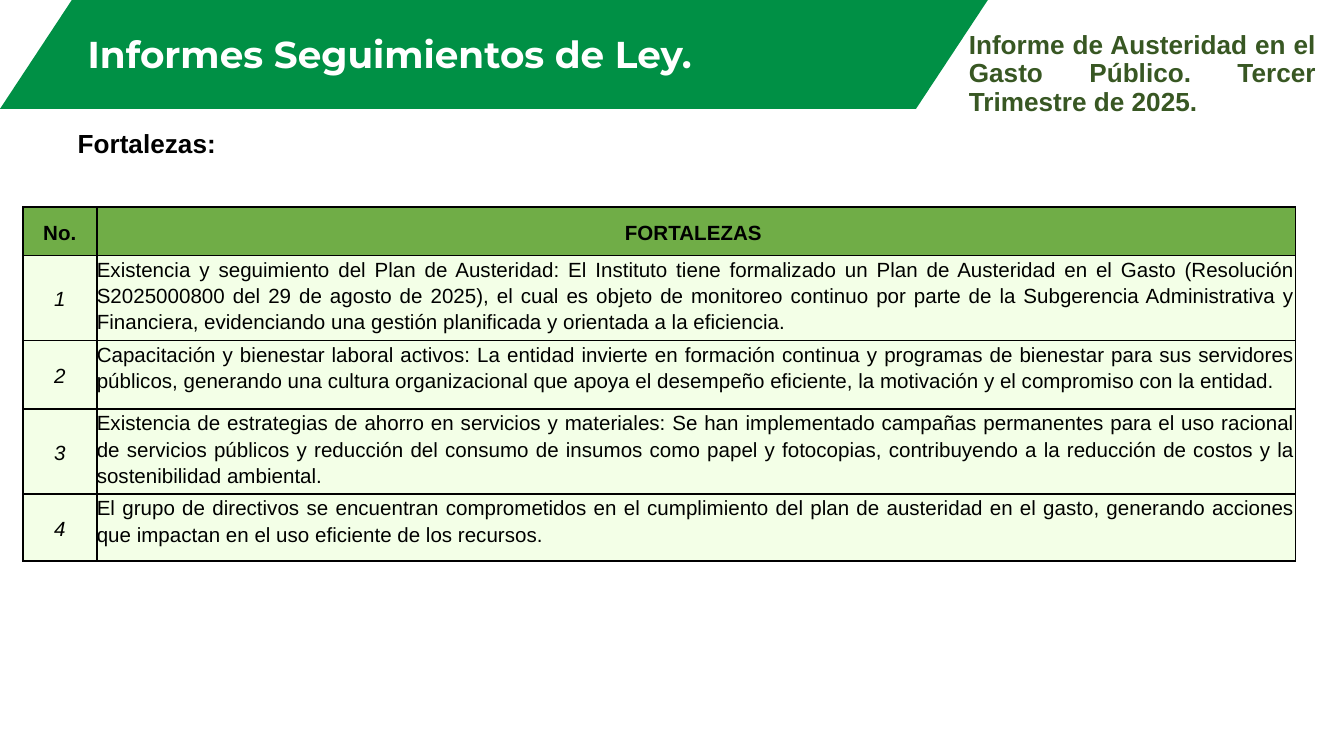
import pptx
import pptx.dml.color
import pptx.enum.shapes
import pptx.enum.text
import pptx.oxml
import pptx.oxml.ns
import pptx.util

Inches = pptx.util.Inches
Align = pptx.enum.text.PP_ALIGN
Anchor = pptx.enum.text.MSO_ANCHOR

STRENGTHS = [
    "Existencia y seguimiento del Plan de Austeridad: El Instituto tiene formalizado un Plan de "
    "Austeridad en el Gasto (Resolución S2025000800 del 29 de agosto de 2025), el cual es objeto "
    "de monitoreo continuo por parte de la Subgerencia Administrativa y Financiera, evidenciando "
    "una gestión planificada y orientada a la eficiencia.",
    "Capacitación y bienestar laboral activos: La entidad invierte en formación continua y "
    "programas de bienestar para sus servidores públicos, generando una cultura organizacional "
    "que apoya el desempeño eficiente, la motivación y el compromiso con la entidad.",
    "Existencia de estrategias de ahorro en servicios y materiales: Se han implementado campañas "
    "permanentes para el uso racional de servicios públicos y reducción del consumo de insumos "
    "como papel y fotocopias, contribuyendo a la reducción de costos y la sostenibilidad ambiental.",
    "El grupo de directivos se encuentran comprometidos en el cumplimiento del plan de austeridad "
    "en el gasto, generando acciones que impactan en el uso eficiente de los recursos.",
]
COLUMN_WIDTHS = [0.55, 8.92]
ROW_HEIGHTS = [0.36, 0.63, 0.51, 0.63, 0.5]


def rgb(value):
    return pptx.dml.color.RGBColor.from_string(value)


def write_text(frame, text, size, color="000000", font="Arial", bold=False, italic=False,
               align=Align.JUSTIFY, spacing=1.0):
    frame.text = text
    para = frame.paragraphs[0]
    para.alignment = align
    para.line_spacing = spacing
    for span in para.runs:
        span.font.name = font
        span.font.size = pptx.util.Pt(size)
        span.font.bold = bold
        span.font.italic = italic
        span.font.color.rgb = rgb(color)


def add_banner(page):
    """Draw the slanted green band behind every other element."""
    banner = page.shapes.add_shape(pptx.enum.shapes.MSO_SHAPE.PARALLELOGRAM,
                                   0, 0, Inches(7.35), Inches(0.81))
    banner.adjustments[0] = 0.66
    banner.shadow.inherit = False
    banner.fill.solid()
    banner.fill.fore_color.rgb = rgb("009045")
    banner.line.fill.background()
    page.shapes._spTree.insert(2, banner._element)


def set_title(page, text):
    title = page.shapes.title
    title.left, title.top = Inches(0), Inches(0.19)
    title.width, title.height = Inches(5.88), Inches(0.43)
    frame = title.text_frame
    frame.word_wrap = True
    frame.auto_size = pptx.enum.text.MSO_AUTO_SIZE.NONE
    frame.vertical_anchor = Anchor.BOTTOM
    write_text(frame, text, 20, "FFFFFF", "Montserrat", bold=True,
               align=Align.CENTER, spacing=0.9)


def add_label(page, text, left, top, width, height, color, wrap=True, spacing=1.0):
    box = page.shapes.add_textbox(Inches(left), Inches(top), Inches(width), Inches(height))
    box.text_frame.word_wrap = wrap
    write_text(box.text_frame, text, 14, color, bold=True, spacing=spacing)


def add_borders(cell):
    properties = cell._tc.get_or_add_tcPr()
    for side in ("lnL", "lnR", "lnT", "lnB"):
        properties.append(pptx.oxml.parse_xml(
            f'<a:{side} {pptx.oxml.ns.nsdecls("a")} w="12700"><a:solidFill>'
            f'<a:srgbClr val="000000"/></a:solidFill></a:{side}>'))


def fill_cell(cell, text, color, anchor=Anchor.MIDDLE, **style):
    add_borders(cell)
    cell.fill.solid()
    cell.fill.fore_color.rgb = rgb(color)
    cell.margin_left = cell.margin_right = cell.margin_top = cell.margin_bottom = 0
    cell.vertical_anchor = anchor
    write_text(cell.text_frame, text, 11, spacing=1.15, **style)


def add_strengths_table(page):
    table = page.shapes.add_table(
        len(ROW_HEIGHTS), len(COLUMN_WIDTHS), Inches(0.17), Inches(1.54),
        Inches(sum(COLUMN_WIDTHS)), Inches(sum(ROW_HEIGHTS))).table
    for column, width in zip(table.columns, COLUMN_WIDTHS):
        column.width = Inches(width)
    for row, height in zip(table.rows, ROW_HEIGHTS):
        row.height = Inches(height)
    for column, heading in enumerate(["No.", "FORTALEZAS "]):
        fill_cell(table.cell(0, column), heading, "70AD47", bold=True, align=Align.CENTER)
    for number, strength in enumerate(STRENGTHS, start=1):
        fill_cell(table.cell(number, 0), str(number), "F3FFE7", italic=True, align=Align.CENTER)
        fill_cell(table.cell(number, 1), strength, "F3FFE7", anchor=Anchor.TOP)


def main():
    deck = pptx.Presentation()
    deck.slide_width = Inches(10)
    deck.slide_height = deck.slide_width * 9 // 16
    page = deck.slides.add_slide(deck.slide_layouts[5])
    add_banner(page)
    set_title(page, "Informes Seguimientos de Ley. ")
    add_label(page, "Informe de Austeridad en el Gasto Público. Tercer Trimestre de 2025.",
              7.11, 0.19, 2.78, 0.74, "385723", spacing=0.9)
    add_label(page, "Fortalezas:", 0.48, 0.9, 1.34, 0.34, "000000", wrap=False)
    add_strengths_table(page)
    deck.save("out.pptx")


if __name__ == "__main__":
    main()
